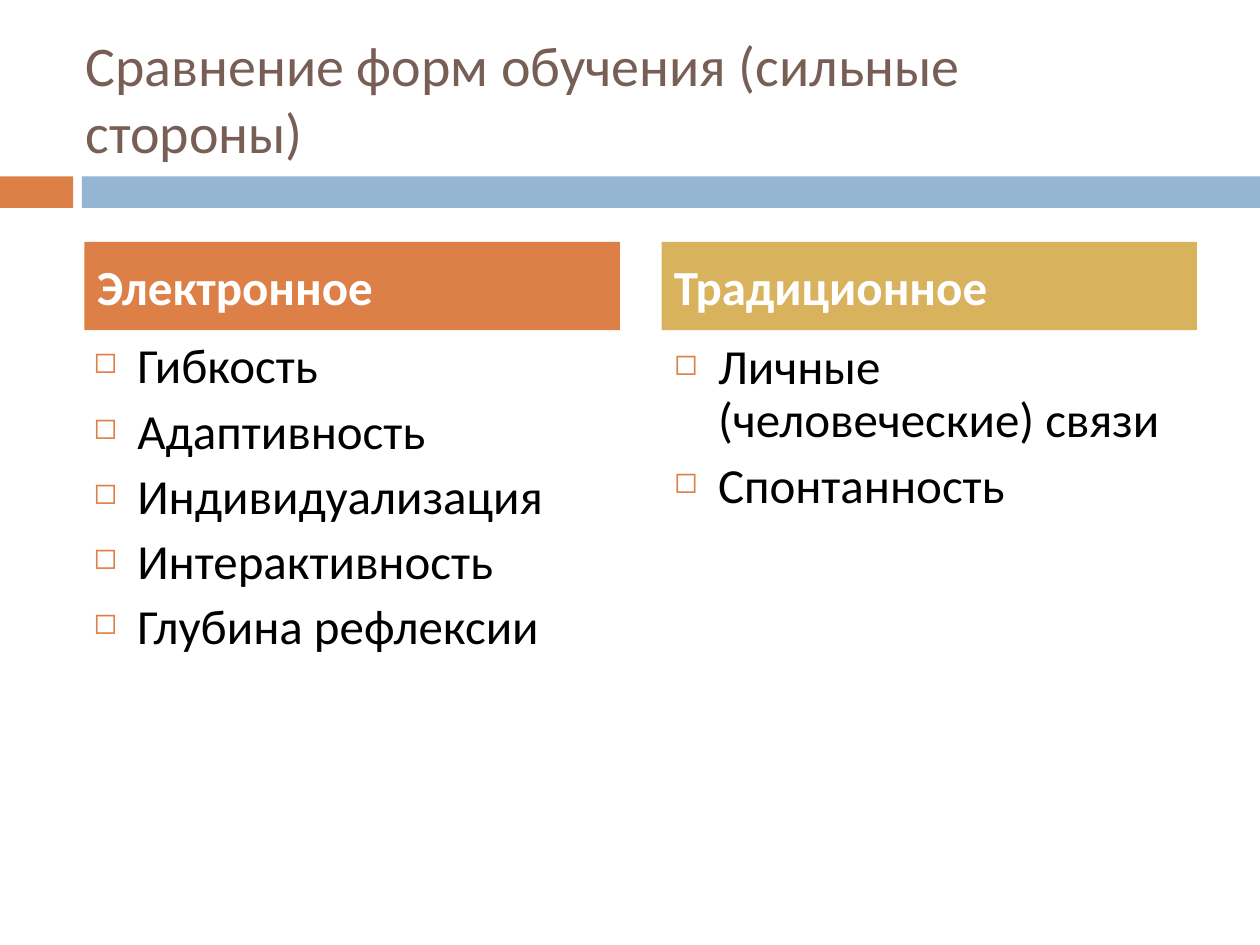
import pptx
import pptx.dml.color
import pptx.enum.shapes
import pptx.enum.text
import pptx.oxml.ns
import pptx.util
from lxml import etree
from pptx.util import Inches

ORANGE = pptx.dml.color.RGBColor(0xDD, 0x80, 0x47)
BLUE = pptx.dml.color.RGBColor(0x94, 0xB6, 0xD2)
GOLD = pptx.dml.color.RGBColor(0xD8, 0xB2, 0x5C)
BROWN = pptx.dml.color.RGBColor(0x77, 0x5F, 0x55)
WHITE = pptx.dml.color.RGBColor(0xFF, 0xFF, 0xFF)
BLACK = pptx.dml.color.RGBColor(0, 0, 0)

FONT = "Calibri"
MIDDLE = pptx.enum.text.MSO_ANCHOR.MIDDLE
COLUMN_WIDTH = 4.25
HEADING_TOP = 1.92
LIST_TOP = 2.67


def style_paragraph(paragraph, size, color, bold=False):
    paragraph.alignment = pptx.enum.text.PP_ALIGN.LEFT
    paragraph.font.name = FONT
    paragraph.font.size = pptx.util.Pt(size)
    paragraph.font.bold = bold
    paragraph.font.color.rgb = color


def add_bullet(paragraph):
    properties = paragraph._p.get_or_add_pPr()
    properties.set("marL", str(Inches(0.35)))
    properties.set("indent", str(-Inches(0.35)))
    qualify = pptx.oxml.ns.qn
    color = etree.SubElement(properties, qualify("a:buClr"))
    etree.SubElement(color, qualify("a:srgbClr"), val=str(ORANGE))
    etree.SubElement(properties, qualify("a:buSzPct"), val="60000")
    etree.SubElement(properties, qualify("a:buChar"), char="◻")


def add_bar(slide, left, top, width, height, color):
    shape = slide.shapes.add_shape(
        pptx.enum.shapes.MSO_SHAPE.RECTANGLE,
        Inches(left), Inches(top), Inches(width), Inches(height))
    shape.shadow.inherit = False
    shape.fill.solid()
    shape.fill.fore_color.rgb = color
    shape.line.fill.background()
    return shape


def add_text_frame(slide, left, top, width, height):
    shape = slide.shapes.add_textbox(
        Inches(left), Inches(top), Inches(width), Inches(height))
    shape.text_frame.word_wrap = True
    return shape.text_frame


def add_title(slide, text):
    frame = add_text_frame(slide, 0.58, 0.3, 8.92, 0.95)
    frame.vertical_anchor = MIDDLE
    frame.text = text
    style_paragraph(frame.paragraphs[0], 32, BROWN)


def add_heading(slide, left, text, color):
    frame = add_bar(slide, left, HEADING_TOP, COLUMN_WIDTH, 0.7, color).text_frame
    frame.vertical_anchor = MIDDLE
    frame.text = text
    paragraph = frame.paragraphs[0]
    paragraph.space_before = pptx.util.Pt(7)
    style_paragraph(paragraph, 28, WHITE, bold=True)


def add_bullet_list(slide, left, width, height, items, margins=(0.1, 0.05)):
    frame = add_text_frame(slide, left, LIST_TOP, width, height)
    frame.margin_left = frame.margin_right = Inches(margins[0])
    frame.margin_top = frame.margin_bottom = Inches(margins[1])
    frame.text = "\n".join(items)
    for paragraph in frame.paragraphs:
        paragraph.line_spacing = 0.9
        paragraph.space_before = pptx.util.Pt(7)
        add_bullet(paragraph)
        style_paragraph(paragraph, 28, BLACK)


def main():
    presentation = pptx.Presentation()
    presentation.slide_width = Inches(10)
    presentation.slide_height = Inches(7.5)
    slide = presentation.slides.add_slide(presentation.slide_layouts[6])

    add_bar(slide, 0, 1.4, 0.58, 0.25, ORANGE)
    add_bar(slide, 0.65, 1.4, 9.35, 0.25, BLUE)
    add_title(slide, "Сравнение форм обучения (сильные стороны)")
    add_bullet_list(
        slide, 0.67, 4.41, 3.05,
        ["Гибкость", "Адаптивность", "Индивидуализация",
         "Интерактивность", "Глубина рефлексии"],
        margins=(0.07, 0.04))
    add_bullet_list(
        slide, 5.25, COLUMN_WIDTH, 3.92,
        ["Личные (человеческие) связи", "Спонтанность"])
    add_heading(slide, 0.67, "Электронное", ORANGE)
    add_heading(slide, 5.25, "Традиционное", GOLD)

    presentation.save("out.pptx")


if __name__ == "__main__":
    main()
